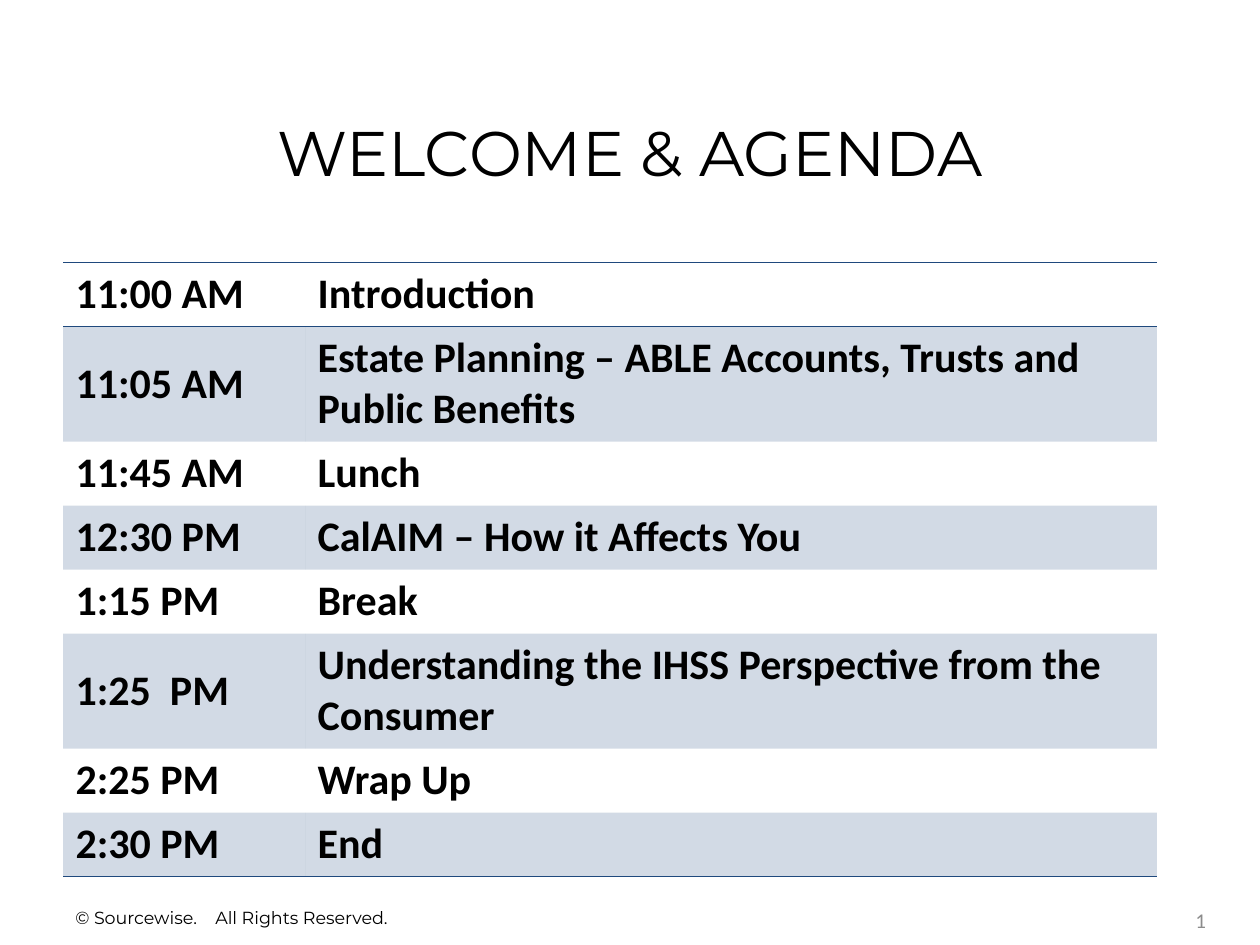
from dataclasses import dataclass

from pptx import Presentation
from pptx.dml.color import RGBColor
from pptx.enum.text import MSO_ANCHOR as Anchor, PP_ALIGN as Align
from pptx.oxml import parse_xml
from pptx.oxml.ns import nsdecls, qn
from pptx.oxml.xmlchemy import OxmlElement
from pptx.util import Cm, Pt

BLACK = RGBColor(0x00, 0x00, 0x00)
GREY = RGBColor(0x8C, 0x8C, 0x8C)
NAVY = RGBColor(0x1F, 0x49, 0x7D)

TITLE_FONT = {"name": "Montserrat", "size": Pt(36)}
CELL_FONT = {"name": "Calibri", "size": Pt(24), "bold": True}
FOOTER_FONT = {"name": "Montserrat", "size": Pt(10)}
NUMBER_FONT = {"name": "Calibri", "size": Pt(12)}

NO_STYLE = "{2D5ABB26-0587-4C30-8999-92F81FD0307C}"
COLUMNS = (Cm(4.88), Cm(17.17))
LINE_HEIGHT = Cm(1.03)
CELL_PADDING = Cm(0.26)


@dataclass
class Session:
    time: str
    topic: str
    lines: int = 1


AGENDA = [
    Session("11:00 AM", "Introduction"),
    Session("11:05 AM", "Estate Planning – ABLE Accounts, Trusts and Public Benefits", 2),
    Session("11:45 AM", "Lunch"),
    Session("12:30 PM", "CalAIM – How it Affects You"),
    Session("1:15 PM", "Break"),
    Session("1:25  PM", "Understanding the IHSS Perspective from the Consumer", 2),
    Session("2:25 PM", "Wrap Up"),
    Session("2:30 PM", "End"),
]


def write(tf, text: str, font: dict, color: RGBColor = BLACK, align=Align.LEFT):
    p = tf.paragraphs[0]
    p.alignment = align
    r = p.add_run()
    r.text = text
    for name, value in font.items():
        setattr(r.font, name, value)
    r.font.color.rgb = color
    return r


def add_text(slide, box: tuple, text: str, font: dict, color=BLACK, align=Align.LEFT):
    tf = slide.shapes.add_textbox(*box).text_frame
    tf.word_wrap = True
    tf.vertical_anchor = Anchor.MIDDLE
    return write(tf, text, font, color, align)


def make_slide_number(r) -> None:
    """Turn a run into a slide number field."""
    field = OxmlElement("a:fld")
    field.set("id", "{B6F15528-21DE-4FAA-801E-634DDDAF4B2B}")
    field.set("type", "slidenum")
    r._r.addprevious(field)
    field.extend(list(r._r))
    field.getparent().remove(r._r)


def shade(cell) -> None:
    """Fill a cell with navy at 20 % opacity."""
    cell.fill.solid()
    cell.fill.fore_color.rgb = NAVY
    alpha = OxmlElement("a:alpha")
    alpha.set("val", "20000")
    cell._tc.tcPr.find(f".//{qn('a:srgbClr')}").append(alpha)


def add_borders(cell, *sides: str) -> None:
    """Rule the given sides, named in schema order (T before B)."""
    for i, side in enumerate(sides):
        cell._tc.get_or_add_tcPr().insert(i, parse_xml(
            f'<a:ln{side} {nsdecls("a")} w="{Pt(1)}"><a:solidFill>'
            f'<a:srgbClr val="{NAVY}"/></a:solidFill></a:ln{side}>'))


def add_agenda(slide, sessions: list[Session]) -> None:
    heights = [s.lines * LINE_HEIGHT + CELL_PADDING for s in sessions]
    frame = slide.shapes.add_table(len(sessions), len(COLUMNS), Cm(1.27), Cm(5.29),
                                   sum(COLUMNS), sum(heights))
    table = frame.table
    table.first_row = table.horz_banding = False
    table._tbl.tblPr.find(qn("a:tableStyleId")).text = NO_STYLE
    for column, width in zip(table.columns, COLUMNS):
        column.width = width
    last = len(sessions) - 1
    for i, (session, height) in enumerate(zip(sessions, heights)):
        table.rows[i].height = height
        for cell, text in zip(table.rows[i].cells, (session.time, session.topic)):
            cell.vertical_anchor = Anchor.MIDDLE
            write(cell.text_frame, text, CELL_FONT)
            if i % 2:
                shade(cell)
            else:
                cell.fill.background()
            if i == 0:
                add_borders(cell, "T", "B")
            elif i == last:
                add_borders(cell, "B")


def main() -> None:
    prs = Presentation()
    prs.slide_width, prs.slide_height = Cm(25.4), Cm(19.05)
    slide = prs.slides.add_slide(prs.slide_layouts[5])

    title = slide.shapes.title
    title.left, title.top, title.width, title.height = Cm(1.27), Cm(1.85), Cm(22.86), Cm(2.39)
    title.text_frame.vertical_anchor = Anchor.MIDDLE
    write(title.text_frame, "WELCOME & AGENDA", TITLE_FONT, align=Align.CENTER)

    add_agenda(slide, AGENDA)
    add_text(slide, (Cm(1.27), Cm(18.16), Cm(12.27), Cm(0.66)),
             "© Sourcewise.    All Rights Reserved.", FOOTER_FONT)
    number = add_text(slide, (Cm(23.29), Cm(18.16), Cm(1.27), Cm(0.76)),
                      "1", NUMBER_FONT, GREY, Align.RIGHT)
    make_slide_number(number)
    prs.save("out.pptx")


if __name__ == "__main__":
    main()
